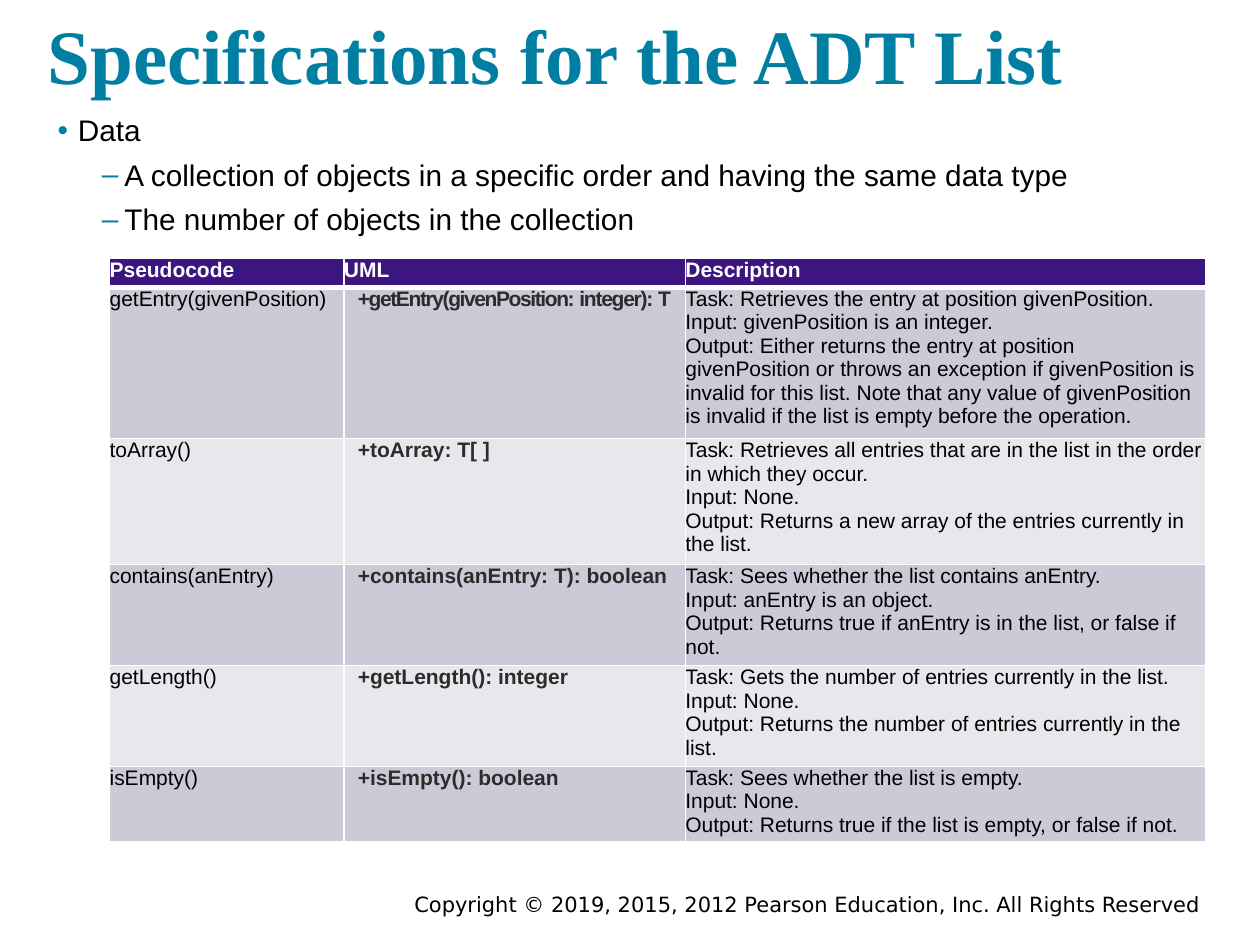
"""Build the slide that specifies the operations of the ADT list."""
import copy
from dataclasses import dataclass

import lxml.etree
import pptx
import pptx.dml.color
import pptx.enum.text
import pptx.oxml.ns
import pptx.util

Inches = pptx.util.Inches
Pt = pptx.util.Pt
RGBColor = pptx.dml.color.RGBColor
Align = pptx.enum.text.PP_ALIGN
Anchor = pptx.enum.text.MSO_ANCHOR
qn = pptx.oxml.ns.qn

TEAL = RGBColor(0x00, 0x7F, 0xA3)
PURPLE = RGBColor(0x3C, 0x15, 0x81)
LILAC = RGBColor(0xCD, 0xCA, 0xD7)
PALE = RGBColor(0xE7, 0xE7, 0xEC)
CHARCOAL = RGBColor(0x2F, 0x2A, 0x2B)
BLACK = RGBColor(0, 0, 0)
WHITE = RGBColor(0xFF, 0xFF, 0xFF)

TITLE = {"name": "Times New Roman", "size": Pt(44), "bold": True}
BODY = {"name": "Arial", "size": Pt(17)}
FOOTER = {"name": "DejaVu Sans", "size": Pt(12)}
STRONG = {"name": "Arial", "size": Pt(12), "bold": True}
PLAIN = {**STRONG, "bold": False}


@dataclass
class Bullet:
    text: str
    level: int = 0


@dataclass
class Operation:
    pseudocode: str
    uml: list[tuple[str, int]]
    description: str


@dataclass
class BulletStyle:
    mark: str
    left: float
    indent: float


BULLET_STYLES = [BulletStyle("•", 0.24, -0.16), BulletStyle("–", 0.61, -0.18)]
BULLETS = [
    Bullet("Data"),
    Bullet("A collection of objects in a specific order and having the same data type", 1),
    Bullet("The number of objects in the collection", 1),
]
HEADINGS = ["Pseudocode", "UML", "Description"]
COLUMN_WIDTHS = [1.86, 2.71, 4.13]
ROW_HEIGHT = 0.23
OPERATIONS = [
    Operation(
        "getEntry(givenPosition)",
        [("+getEntry(givenPosition: ", -80), ("integer): ", -70), ("T", -80)],
        "Task: Retrieves the entry at position givenPosition.\n"
        "Input: givenPosition is an integer. \n"
        "Output: Either returns the entry at position givenPosition or throws an "
        "exception if givenPosition is invalid for this list. Note that any value of "
        "givenPosition is invalid if the list is empty before the operation."),
    Operation(
        "toArray()", [("+toArray: T[ ]", 0)],
        "Task: Retrieves all entries that are in the list in the order in which they occur.\n"
        "Input: None.\n"
        "Output: Returns a new array of the entries currently in the list."),
    Operation(
        "contains(anEntry)", [("+contains(anEntry: T): boolean", 0)],
        "Task: Sees whether the list contains anEntry.\n"
        "Input: anEntry is an object. \n"
        "Output: Returns true if anEntry is in the list, or false if not."),
    Operation(
        "getLength()", [("+getLength(): integer", 0)],
        "Task: Gets the number of entries currently in the list.\n"
        "Input: None.\n"
        "Output: Returns the number of entries currently in the list."),
    Operation(
        "isEmpty()", [("+isEmpty(): boolean", 0)],
        "Task: Sees whether the list is empty. \n"
        "Input: None.\n"
        "Output: Returns true if the list is empty, or false if not."),
]


def set_font(font, style: dict, color: RGBColor) -> None:
    for key, value in style.items():
        setattr(font, key, value)
    font.color.rgb = color


def write(para, text: str, style: dict, color: RGBColor) -> None:
    para.text = text
    for span in para.runs:
        set_font(span.font, style, color)
    for line_break in para._p.findall(qn("a:br")):
        line_break.insert(0, copy.deepcopy(para.runs[0]._r.rPr))


def add_box(page, left: float, top: float, width: float, height: float, margin: float):
    box = page.shapes.add_textbox(Inches(left), Inches(top), Inches(width), Inches(height))
    frame = box.text_frame
    frame.word_wrap = True
    for side in ("left", "top", "right", "bottom"):
        setattr(frame, f"margin_{side}", Inches(margin))
    return frame


def add_bullets(frame, bullets: list[Bullet]) -> None:
    for index, bullet in enumerate(bullets):
        para = frame.add_paragraph() if index else frame.paragraphs[0]
        style = BULLET_STYLES[bullet.level]
        para.level = bullet.level
        properties = para._p.get_or_add_pPr()
        properties.set("marL", str(Inches(style.left)))
        properties.set("indent", str(Inches(style.indent)))
        color = lxml.etree.SubElement(properties, qn("a:buClr"))
        lxml.etree.SubElement(color, qn("a:srgbClr"), val=str(TEAL))
        lxml.etree.SubElement(properties, qn("a:buFont"), typeface="Arial")
        lxml.etree.SubElement(properties, qn("a:buChar"), char=style.mark)
        para.space_before = Pt(5 if index else 0)
        write(para, bullet.text, BODY, BLACK)


def format_cell(cell, fill: RGBColor, top: float, bottom: float) -> None:
    for side in ("left", "top", "right", "bottom"):
        setattr(cell, f"margin_{side}", 0)
    properties = cell._tc.get_or_add_tcPr()
    for edge, width in (("L", 1), ("R", 1), ("T", top), ("B", bottom)):
        line = lxml.etree.SubElement(properties, qn(f"a:ln{edge}"), w=str(Pt(width)))
        solid = lxml.etree.SubElement(line, qn("a:solidFill"))
        lxml.etree.SubElement(solid, qn("a:srgbClr"), val=str(WHITE))
    cell.fill.solid()
    cell.fill.fore_color.rgb = fill


def write_uml(para, parts: list[tuple[str, int]]) -> None:
    para._p.get_or_add_pPr().set("marL", str(Inches(0.11)))
    for text, spacing in parts:
        span = para.add_run()
        span.text = text
        set_font(span.font, STRONG, CHARCOAL)
        span._r.get_or_add_rPr().set("spc", str(spacing))


def add_operations(page, operations: list[Operation]) -> None:
    count = len(operations) + 1
    table = page.shapes.add_table(
        count, len(HEADINGS), Inches(0.87), Inches(2.05),
        Inches(sum(COLUMN_WIDTHS)), Inches(ROW_HEIGHT * count)).table
    for column, width in zip(table.columns, COLUMN_WIDTHS):
        column.width = Inches(width)
    for row in table.rows:
        row.height = Inches(ROW_HEIGHT)
    for index, heading in enumerate(HEADINGS):
        cell = table.cell(0, index)
        format_cell(cell, PURPLE, 1, 3)
        write(cell.text_frame.paragraphs[0], heading, STRONG, WHITE)
    for number, operation in enumerate(operations, 1):
        cells = [table.cell(number, index) for index in range(len(HEADINGS))]
        for cell in cells:
            format_cell(cell, LILAC if number % 2 else PALE, 3 if number == 1 else 1, 1)
        name, uml, description = (cell.text_frame.paragraphs[0] for cell in cells)
        write(name, operation.pseudocode, PLAIN, BLACK)
        write_uml(uml, operation.uml)
        write(description, operation.description, PLAIN, BLACK)


def main() -> None:
    deck = pptx.Presentation()
    deck.slide_width, deck.slide_height = Inches(10), Inches(7.5)
    page = deck.slides.add_slide(deck.slide_layouts[6])
    footer = add_box(page, 1.75, 7.03, 7.83, 0.31, 0.05).paragraphs[0]
    footer.alignment = Align.RIGHT
    write(footer, "Copyright © 2019, 2015, 2012 Pearson Education, Inc. All Rights Reserved",
          FOOTER, BLACK)
    add_bullets(add_box(page, 0.28, 0.79, 9, 1.15, 0.1), BULLETS)
    title = add_box(page, 0.28, 0, 9.31, 0.89, 0.1)
    title.vertical_anchor = Anchor.BOTTOM
    write(title.paragraphs[0], "Specifications for the ADT List", TITLE, TEAL)
    add_operations(page, OPERATIONS)
    deck.save("out.pptx")


if __name__ == "__main__":
    main()
